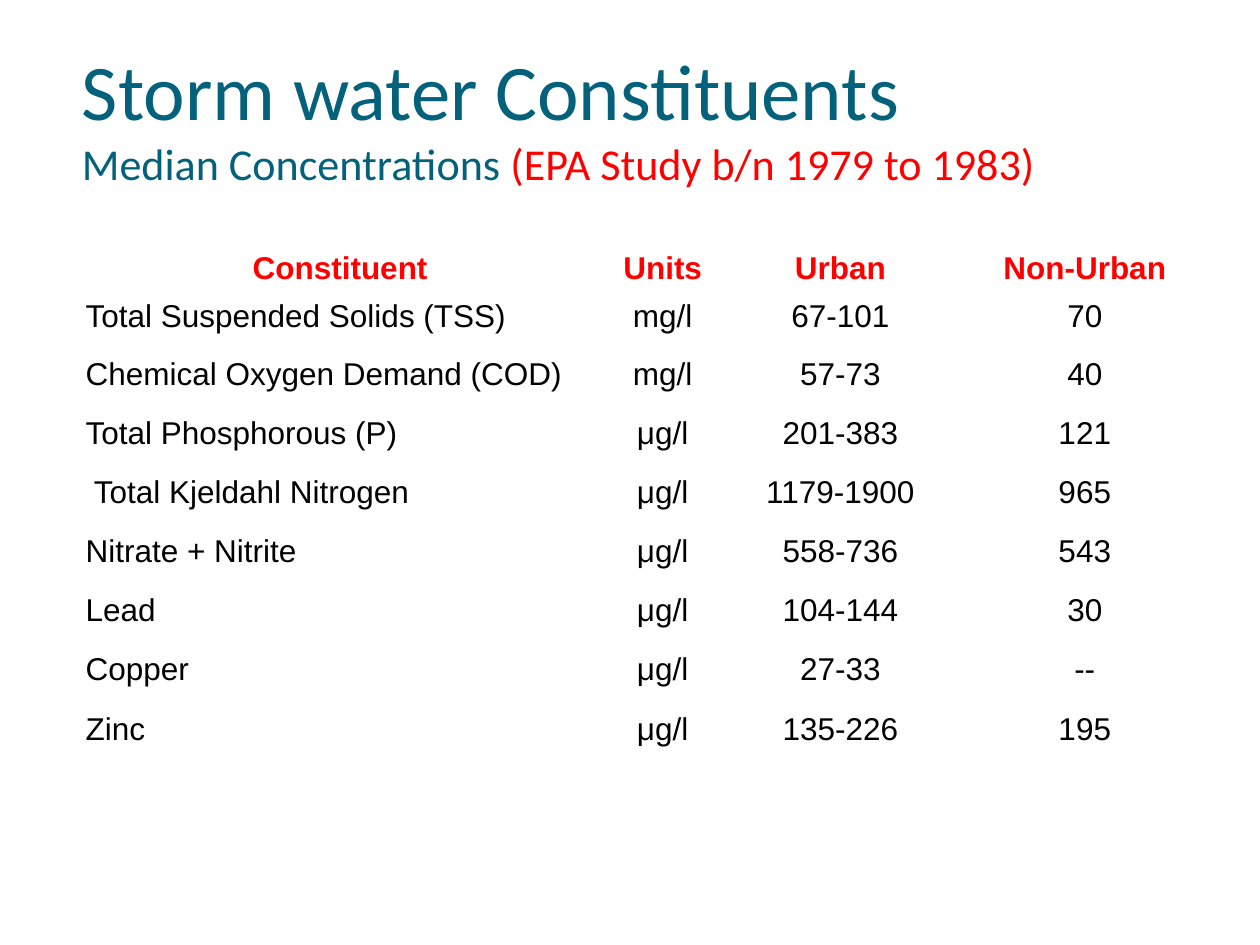
from pptx import Presentation
from pptx.dml.color import RGBColor
from pptx.enum.text import MSO_ANCHOR, PP_ALIGN
from pptx.util import Inches, Pt

COLORS = {"title": "04617B", "accent": "FF0000", "body": "000000"}

TITLE_LINES = [
    [("Storm water Constituents", 45, "title")],
    [("Median Concentrations ", 25.2, "title"),
     ("(EPA Study b/n 1979 to 1983)", 25.2, "accent")],
]

HEADER = ("Constituent", "Units", "Urban", "Non-Urban")
CONSTITUENTS = [
    ("Total Suspended Solids (TSS)", "mg/l", "67-101", "70"),
    ("Chemical Oxygen Demand (COD)", "mg/l", "57-73", "40"),
    ("Total Phosphorous (P)", "μg/l", "201-383", "121"),
    (" Total Kjeldahl Nitrogen", "μg/l", "1179-1900", "965"),
    ("Nitrate + Nitrite", "μg/l", "558-736", "543"),
    ("Lead", "μg/l", "104-144", "30"),
    ("Copper", "μg/l", "27-33", "--"),
    ("Zinc", "μg/l", "135-226", "195"),
]
COLUMN_WIDTHS = (4.24, 0.88, 1.94, 1.94)
ROW_HEIGHTS = [0.57, 0.46] + [0.47] * (len(CONSTITUENTS) - 1)


def color(name):
    return RGBColor.from_string(COLORS[name])


def add_title(slide):
    box = slide.shapes.add_textbox(Inches(0.65), Inches(0.29), Inches(9.1), Inches(1.21))
    frame = box.text_frame
    frame.word_wrap = True
    frame.vertical_anchor = MSO_ANCHOR.BOTTOM
    frame.margin_left = frame.margin_right = frame.margin_bottom = 0
    frame.margin_top = Inches(0.05)
    paragraph = frame.paragraphs[0]
    paragraph.font.name = "Calibri"
    for index, line in enumerate(TITLE_LINES):
        if index:
            paragraph.add_line_break()
        for text, size, color_name in line:
            run = paragraph.add_run()
            run.text = text
            run.font.name = "Calibri"
            run.font.size = Pt(size)
            run.font.color.rgb = color(color_name)


def fill_cell(cell, text, is_header, is_centered):
    cell.fill.background()
    cell.vertical_anchor = MSO_ANCHOR.BOTTOM if is_header else MSO_ANCHOR.TOP
    cell.text = text
    paragraph = cell.text_frame.paragraphs[0]
    paragraph.alignment = PP_ALIGN.CENTER if is_centered else PP_ALIGN.LEFT
    paragraph.font.name = "Arial"
    paragraph.font.size = Pt(18)
    paragraph.font.bold = is_header
    paragraph.font.color.rgb = color("accent" if is_header else "body")


def add_constituent_table(slide):
    rows = [HEADER] + CONSTITUENTS
    table = slide.shapes.add_table(
        len(rows), len(HEADER), Inches(0.58), Inches(1.75),
        Inches(sum(COLUMN_WIDTHS)), Inches(sum(ROW_HEIGHTS))).table
    table.first_row = table.horz_banding = False
    for column, width in zip(table.columns, COLUMN_WIDTHS):
        column.width = Inches(width)
    for row, height in zip(table.rows, ROW_HEIGHTS):
        row.height = Inches(height)
    for row_index, values in enumerate(rows):
        for column_index, text in enumerate(values):
            is_header = row_index == 0
            fill_cell(table.cell(row_index, column_index), text,
                      is_header, is_header or column_index > 0)


def main():
    presentation = Presentation()
    presentation.slide_width = Inches(10)
    presentation.slide_height = Inches(7.5)
    slide = presentation.slides.add_slide(presentation.slide_layouts[6])
    add_title(slide)
    add_constituent_table(slide)
    presentation.save("out.pptx")


if __name__ == "__main__":
    main()
